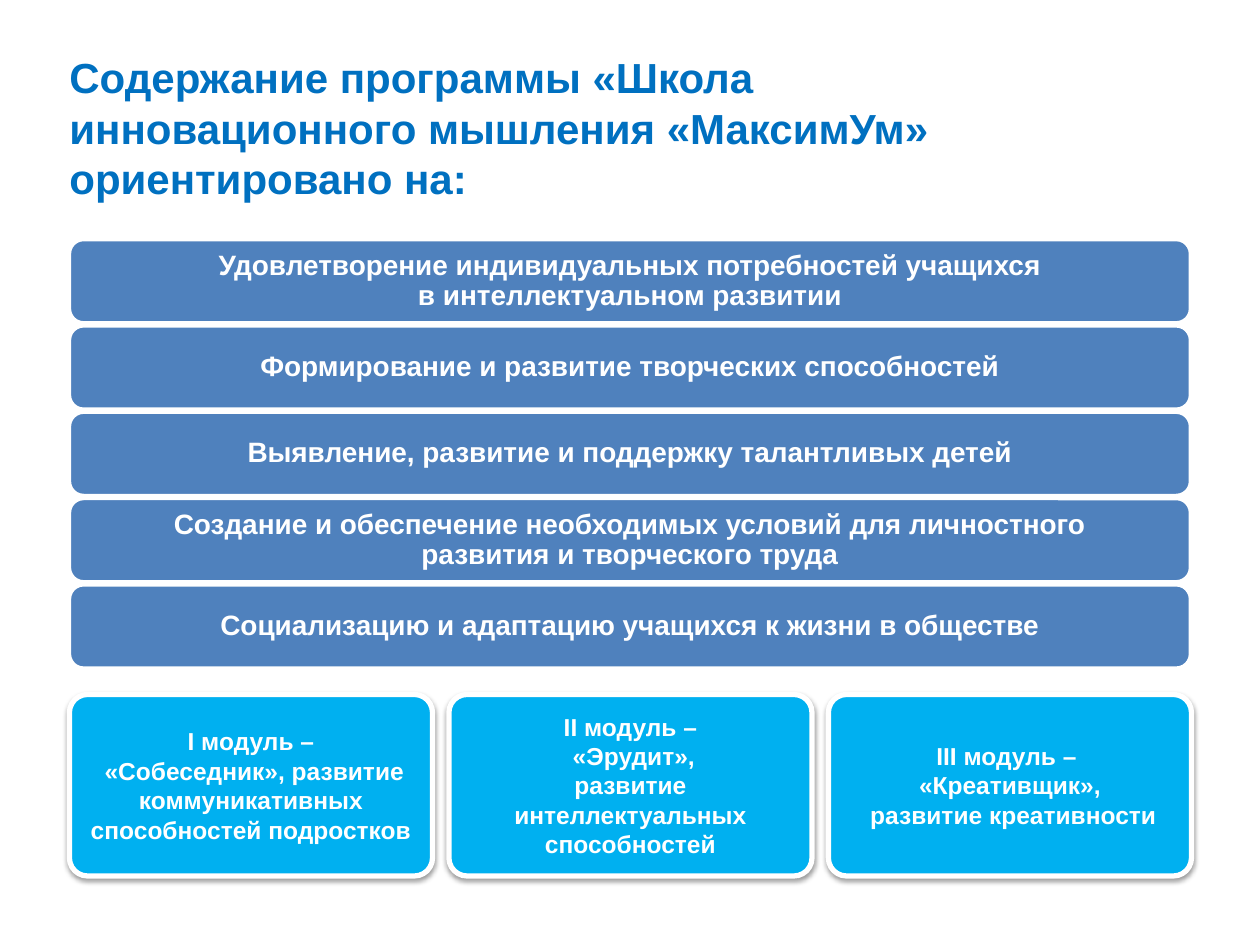
"""Build the slide on the aims and modules of the school programme."""
from dataclasses import dataclass

from lxml.etree import SubElement
from pptx import Presentation
from pptx.dml.color import RGBColor
from pptx.enum.shapes import MSO_SHAPE
from pptx.enum.text import MSO_ANCHOR, PP_ALIGN
from pptx.oxml.ns import qn
from pptx.util import Cm, Pt

COLORS = {
    "title": "0070C0",
    "aim": "4F81BD",
    "module": "00B0F0",
    "white": "FFFFFF",
    "shadow": "000000",
}
LEFT = 1.4


@dataclass(frozen=True)
class CardStyle:
    width: float
    height: float
    fill: str
    line: float
    radius: float
    inset: float
    size: int
    spacing: float
    shadow: bool


AIM = CardStyle(22.6, 1.68, "aim", 2, 0.17, 0.18, 16, 0.9, False)
MODULE = CardStyle(7.32, 3.66, "module", 3, 0.1, 0.2, 14, 1.0, True)
AIM_TOP, AIM_STEP = 4.83, 1.74
MODULE_TOP, MODULE_STEP = 14.0, 7.65

TITLE = "Содержание программы «Школа инновационного мышления «МаксимУм» ориентировано на:"
AIMS = [
    ["Удовлетворение индивидуальных потребностей учащихся", "в интеллектуальном развитии"],
    ["Формирование и развитие творческих способностей"],
    ["Выявление, развитие и поддержку талантливых детей"],
    ["Создание и обеспечение необходимых условий для личностного",
     "развития и творческого труда"],
    ["Социализацию и адаптацию учащихся к жизни в обществе"],
]
MODULES = [
    ["I модуль –", " «Собеседник», развитие коммуникативных способностей подростков"],
    ["II модуль –", " «Эрудит»,", "развитие интеллектуальных способностей"],
    ["III модуль – ", "«Креативщик»,", " развитие креативности"],
]


def rgb(name: str) -> RGBColor:
    """Return the named colour."""
    return RGBColor.from_string(COLORS[name])


def write(tf, lines: list[str], *, size: int, color: str,
          align=PP_ALIGN.LEFT, spacing: float = 1.0) -> None:
    """Write each line as a bold paragraph."""
    tf.word_wrap = True
    for i, line in enumerate(lines):
        p = tf.add_paragraph() if i else tf.paragraphs[0]
        p.alignment = align
        p.line_spacing = spacing
        r = p.add_run()
        r.text = line
        r.font.name = "Arial"
        r.font.size = Pt(size)
        r.font.bold = True
        r.font.color.rgb = rgb(color)


def add_shadow(sp) -> None:
    """Give the shape a soft shadow that falls straight down."""
    effects = sp._element.spPr.find(qn("a:effectLst"))
    outer = SubElement(effects, qn("a:outerShdw"), blurRad=str(Pt(3.1)), dist=str(Pt(1.6)),
                       dir="5400000", rotWithShape="0")
    color = SubElement(outer, qn("a:srgbClr"), val=COLORS["shadow"])
    SubElement(color, qn("a:alpha"), val="38000")


def add_card(s, lines: list[str], left: float, top: float, style: CardStyle) -> None:
    """Draw a rounded card with centred white text."""
    sp = s.shapes.add_shape(MSO_SHAPE.ROUNDED_RECTANGLE, Cm(left), Cm(top),
                            Cm(style.width), Cm(style.height))
    sp.adjustments[0] = style.radius
    sp.fill.solid()
    sp.fill.fore_color.rgb = rgb(style.fill)
    sp.line.color.rgb = rgb("white")
    sp.line.width = Pt(style.line)
    sp.shadow.inherit = False
    if style.shadow:
        add_shadow(sp)
    tf = sp.text_frame
    tf.vertical_anchor = MSO_ANCHOR.MIDDLE
    tf.margin_left = tf.margin_right = tf.margin_top = tf.margin_bottom = Cm(style.inset)
    write(tf, lines, size=style.size, color="white", align=PP_ALIGN.CENTER,
          spacing=style.spacing)


def main() -> None:
    """Build and save the presentation."""
    prs = Presentation()
    prs.slide_width, prs.slide_height = Cm(25.4), Cm(19.05)
    s = prs.slides.add_slide(prs.slide_layouts[6])
    for i, aim in enumerate(AIMS):
        add_card(s, aim, LEFT, AIM_TOP + i * AIM_STEP, AIM)
    title = s.shapes.add_textbox(Cm(1.15), Cm(0.92), Cm(19.58), Cm(3.33))
    write(title.text_frame, [TITLE], size=24, color="title")
    for i, module in enumerate(MODULES):
        add_card(s, module, LEFT + i * MODULE_STEP, MODULE_TOP, MODULE)
    prs.save("out.pptx")


if __name__ == "__main__":
    main()
